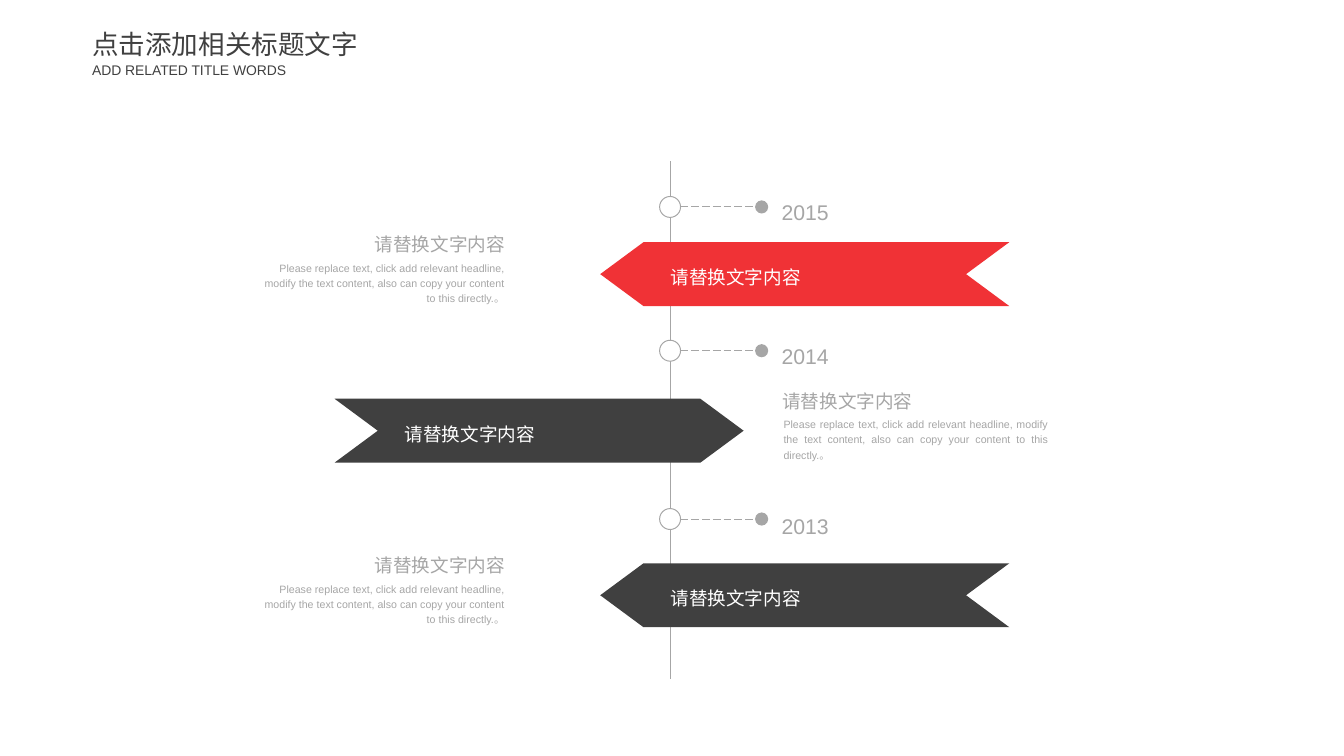
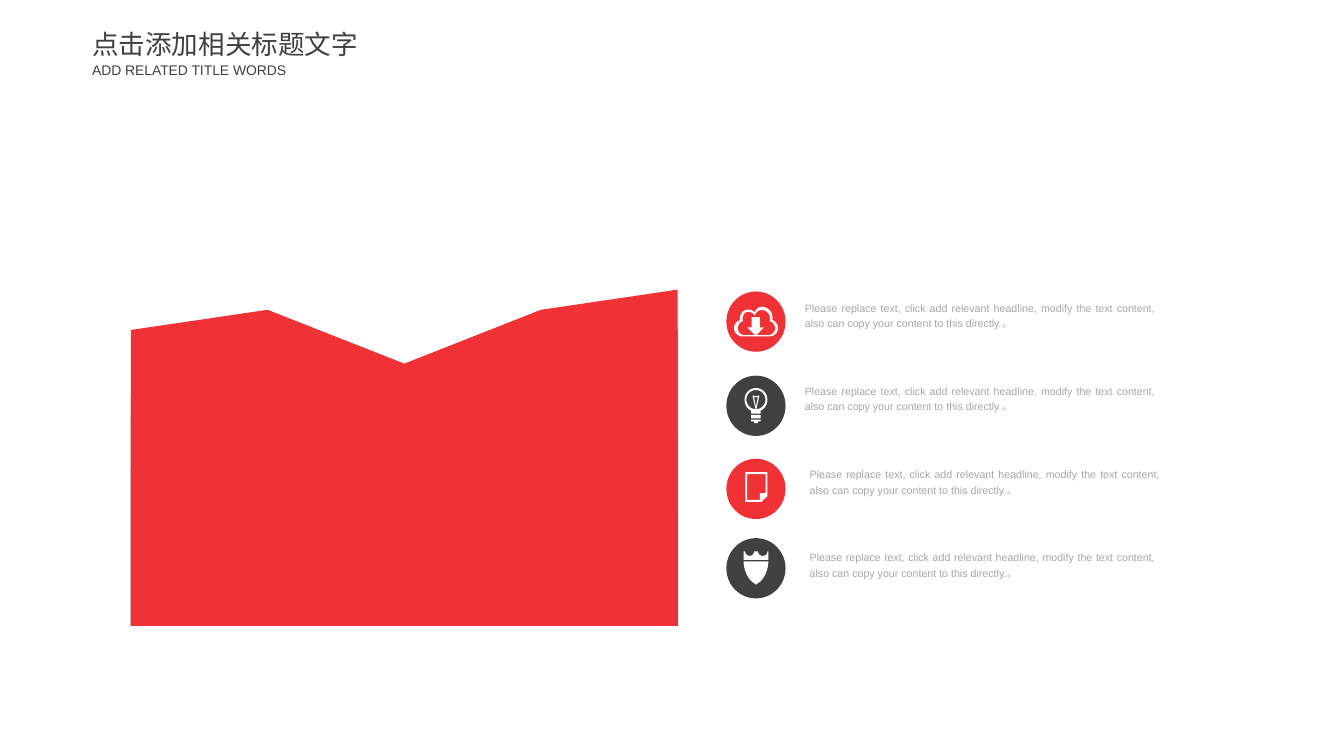
from dataclasses import dataclass

from lxml import etree
from pptx import Presentation
from pptx import util as u
from pptx.chart import data as cd
from pptx.dml import color
from pptx.enum import chart as ce, dml, shapes, text
from pptx.oxml import ns

Pt = u.Pt
Box = tuple[float, float, float, float]
Step = tuple[float, ...]
Contour = list[Step]

FONT = "Arial"
COLORS = {"red": "F03236", "dark": "404040", "grey": "A6A6A6", "white": "FFFFFF"}
ALIGN = {"left": text.PP_ALIGN.LEFT, "right": text.PP_ALIGN.RIGHT,
         "justify": text.PP_ALIGN.JUSTIFY}
HEADLINE = "请替换文字内容"
HEADLINE_W, HEADLINE_H = 113.8, 27.4
BODY = ("Please replace text, click add relevant headline, modify the text content, "
        "also can copy your content to this directly.。")
AXIS_X = 504.8
RING = 15.8


@dataclass(frozen=True)
class Style:
    size: float
    color: str = "grey"
    align: str = "justify"
    spacing: float = 1.2
    wrap: bool = False
    insets: tuple[float, float] = (7.2, 3.6)


@dataclass(frozen=True)
class Event:
    year: str
    ring_y: float
    year_y: float
    banner_y: float
    color: str
    points_left: bool


@dataclass(frozen=True)
class Icon:
    left: float
    top: float
    contours: list[Contour]


@dataclass(frozen=True)
class Feature:
    circle_y: float
    color: str
    text_x: float
    text_w: float
    icons: list[Icon]


EVENTS = [
    Event("2015", 155.9, 143, 182.4, "red", True),
    Event("2014", 264.2, 251.3, 300.4, "dark", False),
    Event("2013", 391, 379, 424.3, "dark", True),
]

CLOUD = Icon(553, 231.1, [
    [(28.8, 10), (29, 9.4, 29, 8.6, 29, 7.9), (29, 3.5, 25.2, 0, 20.9, 0),
     (16.6, 0, 15.8, 4.3, 15.8, 4.3), (15.8, 4.3, 13.7, 1.6, 9.4, 2.2),
     (6.5, 2.7, 4.5, 5.6, 4.5, 8.6), (4.5, 9.2, 4.5, 9.5, 4.6, 10),
     (2, 10.8, 0, 13.3, 0, 16.2), (0, 19.6, 2.9, 22.3, 6.5, 22.3), (26.6, 22.3),
     (30.2, 22.3, 33.1, 19.6, 33.1, 16.2), (33.1, 13.3, 31.3, 10.8, 28.8, 10)],
    [(25.2, 21.4), (17, 21.4), (22.3, 15.6), (19.4, 15.6), (19.4, 7.9), (13.2, 7.9),
     (13.2, 15.6), (10, 15.6), (16, 21.4), (7.9, 21.4),
     (5, 21.4, 2.9, 18.9, 2.9, 16.2), (2.9, 13.5, 4.3, 11.5, 6.8, 10.8),
     (6.5, 10.3, 6.5, 9.4, 6.5, 8.9), (6.5, 6, 8, 4, 10.8, 3.8),
     (13.7, 3.6, 15.8, 6.5, 15.8, 6.5), (15.8, 6.5, 16.6, 2.4, 20.9, 2.4),
     (24.5, 2.4, 27.2, 5.2, 27.2, 9.2), (27.2, 9.7, 26.9, 10.3, 26.8, 10.8),
     (29.3, 11.5, 31, 13.7, 31, 16.2), (31, 19, 28.6, 21.4, 25.2, 21.4)],
])
BULB = Icon(560.9, 292.3, [
    [(17.3, 8.6), (17.3, 4, 13.4, 0, 8.6, 0), (3.9, 0, 0, 4, 0, 8.6),
     (0, 12.7, 2.2, 15.8, 5, 17), (5, 19.3), (12.2, 19.3), (12.2, 17),
     (15, 15.8, 17.3, 12.7, 17.3, 8.6)],
    [(15.8, 8.7), (15.8, 4.7, 12.6, 1.5, 8.6, 1.5), (4.6, 1.5, 1.4, 4.7, 1.4, 8.7),
     (1.4, 12.7, 4.6, 15.9, 8.6, 15.9), (12.6, 15.9, 15.8, 12.7, 15.8, 8.7)],
    [(6.1, 6.2), (6.5, 5.6), (8.6, 6.3), (10.8, 5.6), (11.2, 6.2), (9, 15.7), (8.3, 15.7)],
    [(8.65, 14.2), (7.2, 6.6), (8.65, 7.1), (10.1, 6.6)],
])
BULB_FOOT = Icon(565.9, 316.1, [
    [(0, 0), (7.2, 0), (7.2, 1.4), (5, 1.4), (5, 2.6), (2.2, 2.6), (2.2, 1.4), (0, 1.4)],
])
PAGE = Icon(561.6, 355.7, [
    [(0, 0), (0, 22.3), (12.2, 22.3), (16.6, 18), (16.6, 0)],
    [(1.2, 20.9), (1.2, 1.4), (15.2, 1.4), (15.2, 15.8), (10.8, 15.8), (10.8, 20.9)],
])
SHIELD = Icon(560.2, 422.9, [
    [(9.4, 17.5), (18.7, 12.5, 18.7, 0, 18.7, 0), (0, 0), (0, 0, 0, 12.5, 9.4, 17.5)],
])
CROWN = Icon(560.2, 415.4, [
    [(18, 0), (18, 2, 16.4, 3.4, 14.4, 3.4), (12.4, 3.4, 10.9, 2, 10.9, 0), (7.9, 0),
     (7.9, 2, 6.4, 3.4, 4.7, 3.4), (2.6, 3.4, 1.2, 2, 1.2, 0), (0, 0), (0, 6.4),
     (18.7, 6.4), (18.7, 0)],
])
FEATURES = [
    Feature(219.6, "red", 602.8, 271.4, [CLOUD]),
    Feature(283, "dark", 602.8, 271.4, [BULB, BULB_FOOT]),
    Feature(345.6, "red", 606.4, 271.4, [PAGE]),
    Feature(405.4, "dark", 606.4, 267.8, [SHIELD, CROWN]),
]
SERIES = [
    ("Series 1", (88, 94, 78, 94, 100), "red"),
    ("Series 2", (69, 56, 62, 66, 88), "dark"),
    ("Series 3", (47, 47, 47, 59, 56), "red"),
    ("Series 4", (62, 38, 38, 28, 34), "dark"),
]
PLOT_LAYOUT = {"layoutTarget": "inner", "xMode": "edge", "yMode": "edge",
               "x": "0.02", "y": "0.1", "w": "0.96", "h": "0.88"}


def rgb(name: str) -> color.RGBColor:
    return color.RGBColor.from_string(COLORS[name])


def add_text(s, box: Box, content: str, style: Style) -> None:
    tf = s.shapes.add_textbox(*map(Pt, box)).text_frame
    tf.word_wrap = style.wrap
    tf.auto_size = text.MSO_AUTO_SIZE.SHAPE_TO_FIT_TEXT
    tf.margin_left = tf.margin_right = Pt(style.insets[0])
    tf.margin_top = tf.margin_bottom = Pt(style.insets[1])
    p = tf.paragraphs[0]
    p.alignment = ALIGN[style.align]
    p.line_spacing = style.spacing
    r = p.add_run()
    r.text = content
    r.font.name = FONT
    r.font.size = Pt(style.size)
    r.font.color.rgb = rgb(style.color)


def paint(sp, fill: str, line: str | None = None) -> None:
    sp.shadow.inherit = False
    sp.fill.solid()
    sp.fill.fore_color.rgb = rgb(fill)
    if line:
        sp.line.color.rgb = rgb(line)
        sp.line.width = Pt(0.75)
    else:
        sp.line.fill.background()


def add_preset(s, kind: shapes.MSO_SHAPE, box: Box, fill: str, line: str | None = None):
    sp = s.shapes.add_shape(kind, *map(Pt, box))
    paint(sp, fill, line)
    return sp


def add_line(s, x1: float, y1: float, x2: float, y2: float, dotted: bool = False) -> None:
    c = s.shapes.add_connector(shapes.MSO_CONNECTOR.STRAIGHT, *map(Pt, (x1, y1, x2, y2)))
    c.line.color.rgb = rgb("grey")
    c.line.width = Pt(0.75)
    if dotted:
        c.line.dash_style = dml.MSO_LINE.LONG_DASH
        etree.SubElement(c.line._get_or_add_ln(), ns.qn("a:tailEnd"),
                         type="oval", w="lg", len="lg")
    etree.SubElement(c._element.spPr, ns.qn("a:effectLst"))


def flatten(contour: Contour, steps: int = 8) -> list[tuple[float, float]]:
    points = [(contour[0][0], contour[0][1])]
    for step in contour[1:]:
        if len(step) == 2:
            points.append((step[0], step[1]))
            continue
        x0, y0 = points[-1]
        x1, y1, x2, y2, x3, y3 = step
        for i in range(1, steps + 1):
            t = i / steps
            a, b, c, d = (1 - t) ** 3, 3 * t * (1 - t) ** 2, 3 * t * t * (1 - t), t ** 3
            points.append((a * x0 + b * x1 + c * x2 + d * x3,
                           a * y0 + b * y1 + c * y2 + d * y3))
    return points


def add_icon(s, icon: Icon) -> None:
    outlines = [[(Pt(icon.left + x), Pt(icon.top + y)) for x, y in flatten(contour)]
                for contour in icon.contours]
    builder = s.shapes.build_freeform(*outlines[0][0])
    for i, points in enumerate(outlines):
        if i:
            builder.move_to(*points[0])
        builder.add_line_segments(points[1:], close=True)
    paint(builder.convert_to_shape(), "white")


def add_slide(prs):
    s = prs.slides.add_slide(prs.slide_layouts[6])
    flush = {"color": "dark", "align": "left", "spacing": 1.0, "insets": (0, 0)}
    add_text(s, (69.4, 20.9, 201.6, 24.5), "点击添加相关标题文字", Style(20, **flush))
    add_text(s, (69.4, 46.1, 149.8, 13), "ADD RELATED TITLE WORDS", Style(10.5, **flush))
    return s


def add_event(s, e: Event) -> None:
    add_preset(s, shapes.MSO_SHAPE.OVAL,
               (AXIS_X - RING / 2, e.ring_y - RING / 2, RING, RING), "white", "grey")
    add_line(s, AXIS_X + RING / 2, e.ring_y, 573.8, e.ring_y, dotted=True)
    add_text(s, (581.8, e.year_y, 50.4, 30.2), e.year, Style(16))

    banner_x = 452.2 if e.points_left else 252
    banner = add_preset(s, shapes.MSO_SHAPE.CHEVRON, (banner_x, e.banner_y, 308.2, 48.2), e.color)
    banner.adjustments[0] = 0.677
    banner.rotation = 180 if e.points_left else 0
    add_text(s, (banner_x + 45.8, e.banner_y + 11.3, HEADLINE_W, HEADLINE_H), HEADLINE,
             Style(14, "white", "left"))

    head_x, body_x, body_w = (273.8, 186.5, 200.9) if e.points_left else (582.2, 583.2, 213.8)
    head_align, body_align = ("right", "right") if e.points_left else ("left", "justify")
    head_y = e.banner_y - 13.9
    add_text(s, (head_x, head_y, HEADLINE_W, HEADLINE_H), HEADLINE, Style(14, align=head_align))
    add_text(s, (body_x, head_y + 23, body_w, 42.5), BODY, Style(8, align=body_align, wrap=True))


def build_timeline(prs) -> None:
    s = add_slide(prs)
    add_line(s, AXIS_X, 121.5, AXIS_X, 511.2)
    for e in EVENTS:
        add_event(s, e)


def add_area_chart(s) -> None:
    data = cd.CategoryChartData()
    data.categories = ["1", "2", "3", "4", "5"]
    for name, values, _ in SERIES:
        data.add_series(name, values)
    chart = s.shapes.add_chart(ce.XL_CHART_TYPE.AREA, *map(Pt, (90, 189.4, 429.1, 288)),
                               data).chart
    chart.has_legend = False
    chart.has_title = False
    chart.font.name = FONT
    chart.font.size = Pt(18)
    for series, (_, _, name) in zip(chart.plots[0].series, SERIES):
        series.format.fill.solid()
        series.format.fill.fore_color.rgb = rgb(name)
    chart.value_axis.minimum_scale = 0
    chart.value_axis.maximum_scale = 100
    for axis in (chart.value_axis, chart.category_axis):
        axis.has_major_gridlines = False
        axis.visible = False
    plot = chart._chartSpace.chart.plotArea
    for old in plot.findall(ns.qn("c:layout")):
        plot.remove(old)
    layout = etree.Element(ns.qn("c:layout"))
    manual = etree.SubElement(layout, ns.qn("c:manualLayout"))
    for tag, value in PLOT_LAYOUT.items():
        etree.SubElement(manual, ns.qn(f"c:{tag}"), val=value)
    plot.insert(0, layout)
    for cross in plot.iter(ns.qn("c:crossBetween")):
        cross.set("val", "midCat")


def build_features(prs) -> None:
    s = add_slide(prs)
    add_area_chart(s)
    for i, f in enumerate(FEATURES):
        add_preset(s, shapes.MSO_SHAPE.OVAL, (547.2, f.circle_y, 44.6, 45.4), f.color)
        add_text(s, (f.text_x, 223.4 + 62.6 * i, f.text_w, 27.4), BODY,
                 Style(8, wrap=True, insets=(3.6, 2.2)))
        for icon in f.icons:
            add_icon(s, icon)
    add_preset(s, shapes.MSO_SHAPE.RECTANGLE, (565.9, 312.6, 7.2, 2.6), "white")


def main() -> None:
    prs = Presentation()
    prs.slide_width, prs.slide_height = Pt(1012.5), Pt(569.5)
    build_timeline(prs)
    build_features(prs)
    prs.save("out.pptx")


if __name__ == "__main__":
    main()
